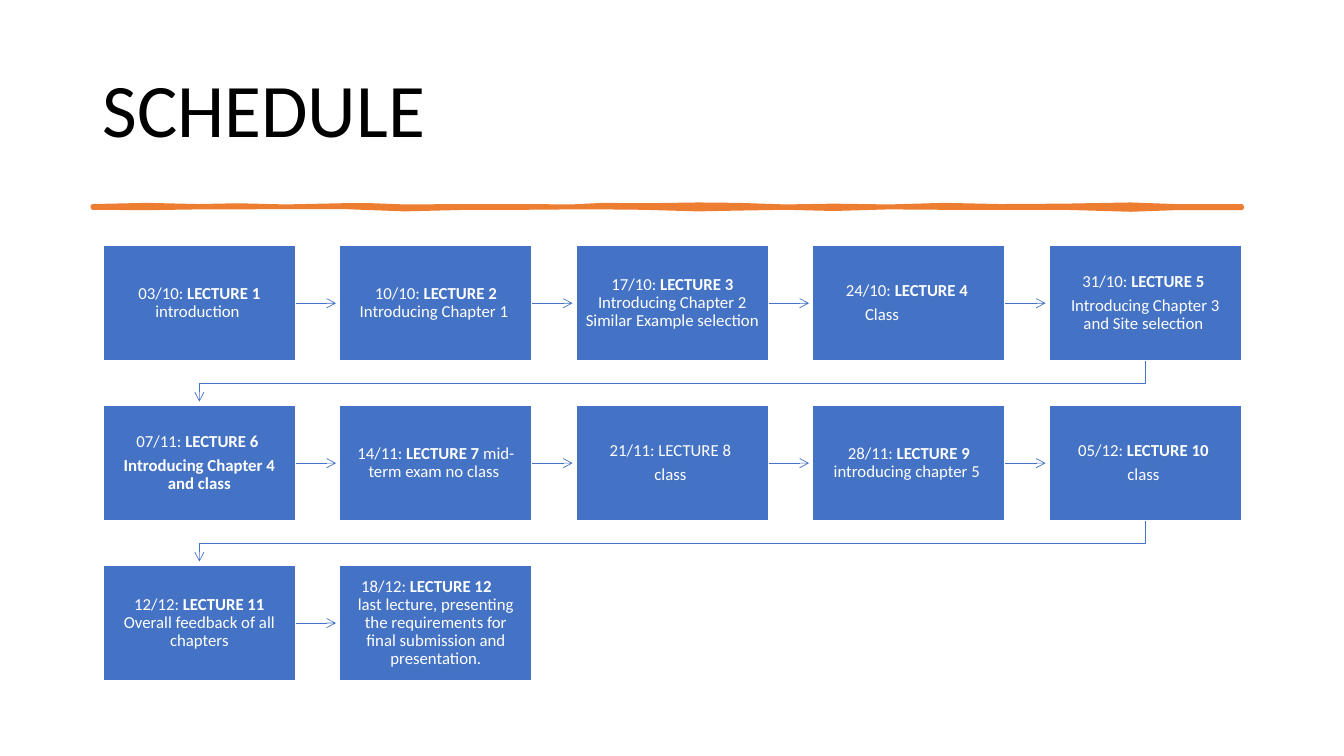
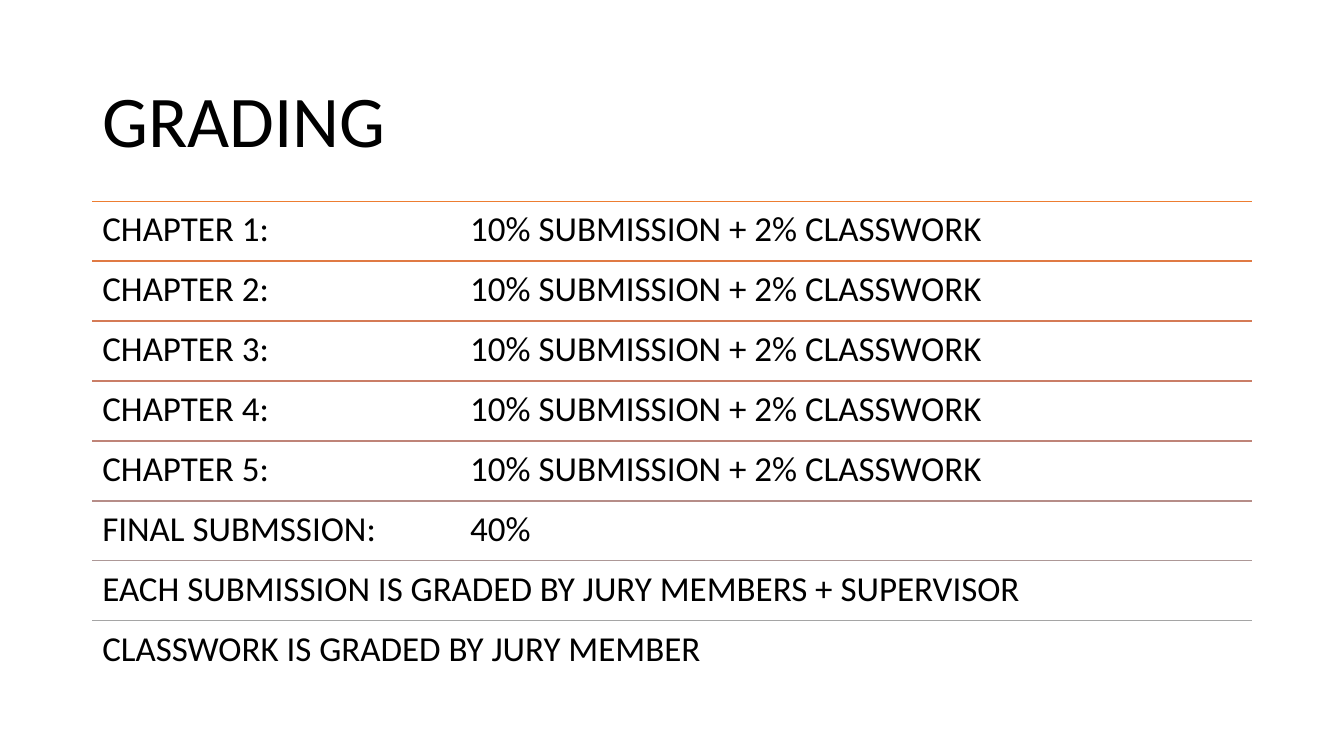
from lxml import etree
from pptx import Presentation
from pptx import util as u
from pptx.dml.color import RGBColor
from pptx.enum import shapes, text
from pptx.oxml.ns import qn

FONT = "Calibri"
BLACK, WHITE, BLUE, ORANGE = "000000", "FFFFFF", "4472C4", "ED7D31"
LEFT, WIDTH = 2.33, 29.21
COLUMNS = 5
BOX_LEFT, BOX_TOP, BOX_WIDTH, BOX_HEIGHT = 2.6, 6.18, 4.85, 2.92
STEP_X, STEP_Y = 5.96, 4.03
ARROW_LENGTH, TURN_DROP = 1.02, 0.56
ROW_TOP, ROW_STEP = 5.07, 1.51

LECTURES = [
    ["03/10: |LECTURE 1 |introduction "],
    ["10/10: |LECTURE 2 |Introducing Chapter 1 "],
    ["17/10: |LECTURE 3 |Introducing Chapter 2 Similar Example selection"],
    ["24/10: |LECTURE 4 ", "Class"],
    ["31/10: |LECTURE 5 ", "Introducing Chapter 3 and Site selection "],
    ["07/11: |LECTURE 6 ", "|Introducing Chapter 4 and class"],
    ["14/11: |LECTURE 7 |mid-term exam no class "],
    ["21/11: LECTURE 8 ", "class "],
    ["28/11: |LECTURE 9 |introducing chapter 5 "],
    ["05/12: |LECTURE 10 ", "class "],
    ["12/12: |LECTURE 11 |Overall feedback of all chapters"],
    ["18/12: |LECTURE 12",
     "last lecture, presenting the requirements for final submission and presentation."],
]
INDENTS = {"Class": 1.08, "18/12: |LECTURE 12": 0.3}

GRADES = [f"CHAPTER {number}: \t\t10% SUBMISSION + 2% CLASSWORK" for number in range(1, 6)] + [
    "FINAL SUBMSSION:\t40%",
    "EACH SUBMISSION IS GRADED BY JURY MEMBERS + SUPERVISOR",
    "CLASSWORK IS GRADED BY JURY MEMBER",
]
RULE_COLOURS = [ORANGE, "E07A44", "D57B56", "CA7E67", "BF8478", "B68D88", "AD9897", "A5A5A5"]

STROKE_Y = 5.2
STROKE_EDGES = [
    (2.34, 0, 0.03), (3.7, -0.03, 0.04), (5, 0, 0.02), (6, -0.02, 0.02), (7.2, 0.01, 0.01),
    (8.6, -0.02, 0.01), (9.4, -0.02, 0.04), (10.2, 0.01, 0.07), (11.8, 0, 0.03),
    (13.2, 0, 0.03), (14.4, 0.01, 0.02), (15.2, -0.03, 0.02), (16.2, -0.02, 0.03),
    (17.6, -0.04, 0.07), (18.6, -0.03, 0.05), (19.8, 0.01, 0.03), (21, -0.01, 0.06),
    (22.4, 0.01, 0.02), (23.8, -0.03, 0.03), (25.2, 0, 0.03), (26.8, -0.01, 0.03),
    (28.5, -0.04, 0.08), (29.6, 0, 0.04), (31.29, 0, 0.04),
]


def rgb(hex_colour):
    return RGBColor.from_string(hex_colour)


def apply(target, values):
    for key, value in values.items():
        setattr(target, key, value)


def cm(*lengths):
    return [u.Cm(length) for length in lengths]


def style_line(item, colour, points, *ends):
    item.line.color.rgb = rgb(colour)
    item.line.width = u.Pt(points)
    outline = item._element.spPr.get_or_add_ln()
    for tag, values in ends:
        etree.SubElement(outline, qn(tag), values)


ARROWHEAD = ("a:tailEnd", {"type": "arrow"})


def add_words(paragraph, words, size, colour, bold=False):
    run = paragraph.add_run()
    run.text = words
    apply(run.font, {"name": FONT, "size": u.Pt(size), "bold": bold})
    run.font.color.rgb = rgb(colour)


def add_title(slide, words, size, top, height):
    title = slide.shapes.title
    apply(title, dict(zip(("left", "top", "width", "height"), cm(LEFT, top, WIDTH, height))))
    apply(title.text_frame, {"vertical_anchor": text.MSO_ANCHOR.MIDDLE,
                             "auto_size": text.MSO_AUTO_SIZE.NONE})
    heading = title.text_frame.paragraphs[0]
    apply(heading, {"alignment": text.PP_ALIGN.LEFT, "line_spacing": 0.9})
    add_words(heading, words, size, BLACK)


def add_line(slide, start, end, colour, points, *ends):
    line = slide.shapes.add_connector(shapes.MSO_CONNECTOR.STRAIGHT, *cm(*start, *end))
    style_line(line, colour, points, *ends)
    etree.SubElement(line._element.spPr, qn("a:effectLst"))


def add_outline(slide, points, closed):
    corners = [cm(*point) for point in points]
    builder = slide.shapes.build_freeform(*corners[0])
    builder.add_line_segments(corners[1:], close=closed)
    outline = builder.convert_to_shape()
    outline.shadow.inherit = False
    return outline


def add_brush_stroke(slide):
    upper = [(x, STROKE_Y + top) for x, top, _ in STROKE_EDGES]
    lower = [(x, STROKE_Y + bottom) for x, _, bottom in reversed(STROKE_EDGES)]
    stroke = add_outline(slide, upper + lower, True)
    stroke.fill.solid()
    stroke.fill.fore_color.rgb = rgb(ORANGE)
    style_line(stroke, ORANGE, 3.25, ("a:round", {}))


def add_turn(slide, left, top):
    start_x = left + BOX_WIDTH / 2
    end_x = BOX_LEFT + BOX_WIDTH / 2
    bottom = top + BOX_HEIGHT
    turn = add_outline(slide, [(start_x, bottom), (start_x, bottom + TURN_DROP),
                               (end_x, bottom + TURN_DROP), (end_x, bottom + ARROW_LENGTH)], False)
    turn.fill.background()
    style_line(turn, BLUE, 0.5, ARROWHEAD)


def add_lecture(slide, left, top, paragraphs):
    box = slide.shapes.add_shape(shapes.MSO_SHAPE.RECTANGLE,
                                 *cm(left, top, BOX_WIDTH, BOX_HEIGHT))
    box.shadow.inherit = False
    box.fill.solid()
    box.fill.fore_color.rgb = rgb(BLUE)
    style_line(box, WHITE, 1)
    frame = box.text_frame
    apply(frame, {"word_wrap": True, "vertical_anchor": text.MSO_ANCHOR.MIDDLE,
                  "margin_left": u.Cm(0.24), "margin_right": u.Cm(0.24),
                  "margin_top": u.Cm(0.25), "margin_bottom": u.Cm(0.25)})
    for index, words in enumerate(paragraphs):
        paragraph = frame.add_paragraph() if index else frame.paragraphs[0]
        indent = INDENTS.get(words)
        apply(paragraph, {"alignment": text.PP_ALIGN.LEFT if indent else text.PP_ALIGN.CENTER,
                          "line_spacing": 0.9, "space_after": u.Pt(0 if indent else 4.2)})
        if indent:
            paragraph._p.get_or_add_pPr().set("marL", str(u.Cm(indent)))
        for position, part in enumerate(words.split("|")):
            if part:
                add_words(paragraph, part, 12, WHITE, position % 2 == 1)


def build_schedule(slide):
    add_title(slide, "SCHEDULE", 54, 1.02, 3.68)
    add_brush_stroke(slide)
    for index, paragraphs in enumerate(LECTURES):
        row, column = divmod(index, COLUMNS)
        left, top = BOX_LEFT + column * STEP_X, BOX_TOP + row * STEP_Y
        add_lecture(slide, left, top, paragraphs)
        if index == len(LECTURES) - 1:
            continue
        if column == COLUMNS - 1:
            add_turn(slide, left, top)
        else:
            right, middle = left + BOX_WIDTH, top + BOX_HEIGHT / 2
            add_line(slide, (right, middle), (right + ARROW_LENGTH, middle), BLUE, 0.5, ARROWHEAD)


def add_grade_list(slide):
    grades = slide.placeholders[1]
    apply(grades, dict(zip(("left", "top", "width", "height"),
                           cm(LEFT, ROW_TOP, WIDTH, ROW_STEP * len(GRADES)))))
    frame = grades.text_frame
    apply(frame, {"word_wrap": True, "auto_size": text.MSO_AUTO_SIZE.NONE,
                  "vertical_anchor": text.MSO_ANCHOR.TOP,
                  "margin_left": u.Cm(0.25), "margin_top": u.Cm(0.25)})
    for index, words in enumerate(GRADES):
        paragraph = frame.add_paragraph() if index else frame.paragraphs[0]
        apply(paragraph, {"alignment": text.PP_ALIGN.LEFT, "line_spacing": 0.9,
                          "space_before": u.Pt(0), "space_after": u.Pt(15.85)})
        properties = paragraph._p.get_or_add_pPr()
        for key, length in {"marL": 0, "indent": 0, "defTabSz": 3.09}.items():
            properties.set(key, str(u.Cm(length)))
        etree.SubElement(properties, qn("a:buNone"))
        add_words(paragraph, words, 25, BLACK)


def build_grading(slide):
    add_title(slide, "GRADING", 52, 1.55, 3.15)
    for row, colour in enumerate(RULE_COLOURS):
        y = ROW_TOP + row * ROW_STEP
        add_line(slide, (LEFT, y), (LEFT + WIDTH, y), colour, 1)
    add_grade_list(slide)


def main():
    deck = Presentation()
    apply(deck, {"slide_width": u.Cm(33.87), "slide_height": u.Cm(19.05)})
    title_and_content, title_only = deck.slide_layouts[1], deck.slide_layouts[5]
    build_schedule(deck.slides.add_slide(title_only))
    build_grading(deck.slides.add_slide(title_and_content))
    deck.save("out.pptx")


if __name__ == "__main__":
    main()
